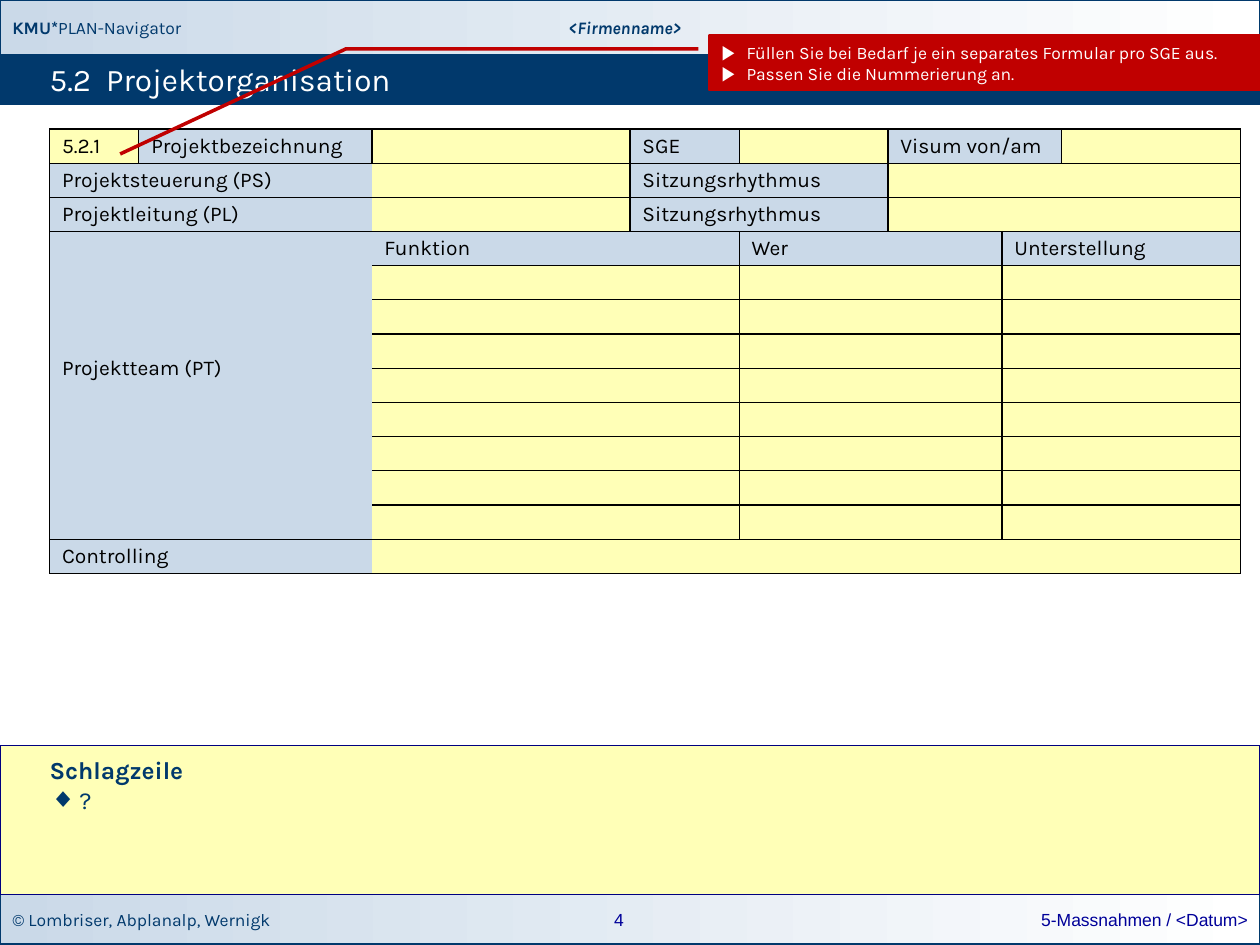
from dataclasses import dataclass

from lxml.etree import SubElement
from pptx import Presentation
from pptx.dml.color import RGBColor
from pptx.enum.shapes import MSO_SHAPE
from pptx.enum.text import MSO_ANCHOR, PP_ALIGN
from pptx.oxml.ns import qn
from pptx.util import Cm, Pt


@dataclass(frozen=True)
class Theme:
    navy: str = "01396C"
    pale: str = "CAD9E8"
    yellow: str = "FFFFB7"
    red: str = "C00000"
    white: str = "FFFFFF"
    black: str = "000000"
    footer: str = "000099"
    frame: str = "000080"
    font: str = "Karla"
    footer_font: str = "Arial"
    small: int = 10
    body: int = 12
    heading: int = 14
    title: int = 18


T = Theme()
LABEL, VALUE, FULL = "LTB", "RTB", "LRTB"
PLAIN_TABLE_STYLE = "{2D5ABB26-0587-4C30-8999-92F81FD0307C}"


def rgb(color):
    return RGBColor.from_string(color)


def write(p, text, color, size, font=T.font, **extra):
    r = p.add_run()
    r.text = text
    r.font.color.rgb = rgb(color)
    for name, value in {"name": font, "size": Pt(size), **extra}.items():
        setattr(r.font, name, value)


def frame(tf, left=0.25, top=0.13, right=0.25, bottom=0.13, anchor=MSO_ANCHOR.MIDDLE):
    values = {"margin_left": Cm(left), "margin_top": Cm(top), "margin_right": Cm(right),
              "margin_bottom": Cm(bottom), "vertical_anchor": anchor, "word_wrap": True}
    for name, value in values.items():
        setattr(tf, name, value)
    return tf


def bullet(p, char, color, percent, indent):
    pPr = p._p.get_or_add_pPr()
    pPr.set("marL", str(Cm(indent)))
    pPr.set("indent", str(-Cm(indent)))
    SubElement(SubElement(pPr, qn("a:buClr")), qn("a:srgbClr"), val=color)
    SubElement(pPr, qn("a:buSzPct"), val=str(percent * 1000))
    SubElement(pPr, qn("a:buFont"), typeface=T.footer_font)
    SubElement(pPr, qn("a:buChar"), char=char)


def add_box(s, box, fill, line, width=0.75, shape=MSO_SHAPE.RECTANGLE):
    """A pair of fill colours makes a gradient from left to right."""
    sp = s.shapes.add_shape(shape, *map(Cm, box))
    sp.shadow.inherit = False
    if isinstance(fill, tuple):
        sp.fill.gradient()
        sp.fill.gradient_angle = 0
        for stop, color in zip(sp.fill.gradient_stops, fill):
            stop.color.rgb = rgb(color)
    else:
        sp.fill.solid()
        sp.fill.fore_color.rgb = rgb(fill)
    sp.line.color.rgb = rgb(line)
    sp.line.width = Pt(width)
    sp.text_frame.paragraphs[0].alignment = PP_ALIGN.LEFT
    return sp


def add_label(s, box, text, color, size, align=PP_ALIGN.LEFT, inset=0.25, **font):
    tf = frame(s.shapes.add_textbox(*map(Cm, box)).text_frame, left=inset, right=inset)
    tf.paragraphs[0].alignment = align
    write(tf.paragraphs[0], text, color, size, **font)


def add_header(s, left, top, width, band, title_band):
    sp = add_box(s, (left, top, width, band), (T.pale, T.white), T.navy)
    p = frame(sp.text_frame).paragraphs[0]
    write(p, "KMU*", T.navy, T.small, bold=True)
    write(p, "PLAN-Navigator", T.navy, T.small)
    add_label(s, (left + 8.1, top, 9, band), "<Firmenname>", T.navy, T.small,
              PP_ALIGN.CENTER, bold=True, italic=True)
    add_box(s, (left, top + band, width, title_band), T.navy, T.navy)
    add_label(s, (left + 1, top + band, 23.6, title_band), "5.2  Projektorganisation",
              T.white, T.title, inset=0)


def add_footer(s, left, top, width, height):
    sp = add_box(s, (left, top, width, height), (T.pale, T.white), T.navy)
    write(frame(sp.text_frame).paragraphs[0], "© Lombriser, Abplanalp, Wernigk",
          T.navy, T.small)
    add_label(s, (left + 11.88, top, 1.2, height), "4", T.footer, T.small,
              PP_ALIGN.CENTER, font=T.footer_font)
    add_label(s, (left + width - 8, top, 8, height), "5-Massnahmen / <Datum>",
              T.footer, T.small, PP_ALIGN.RIGHT, font=T.footer_font)


def add_border(cell, side):
    ln = SubElement(cell._tc.get_or_add_tcPr(), qn(f"a:ln{side}"), w=str(Pt(0.75)))
    SubElement(SubElement(ln, qn("a:solidFill")), qn("a:srgbClr"), val=T.black)


def fill_cell(table, row, col, rows, cols, text, fill, sides):
    """The merge origin carries every border, covered cells only the outer ones."""
    last_row, last_col = row + rows - 1, col + cols - 1
    origin = table.cell(row, col)
    if rows * cols > 1:
        origin.merge(table.cell(last_row, last_col))
    for r in range(row, last_row + 1):
        for c in range(col, last_col + 1):
            cell = table.cell(r, c)
            outer = {"L": c == col, "R": c == last_col, "T": r == row, "B": r == last_row}
            for side in sides:
                if outer[side] or not cell.is_spanned:
                    add_border(cell, side)
            cell.fill.solid()
            cell.fill.fore_color.rgb = rgb(fill)
            for name, value in {"margin_left": Cm(0.25), "margin_right": Cm(0.05),
                                "margin_top": Cm(0.09), "margin_bottom": Cm(0.09),
                                "vertical_anchor": MSO_ANCHOR.MIDDLE}.items():
                setattr(cell, name, value)
            if not text or cell.is_spanned:
                end = SubElement(cell.text_frame.paragraphs[0]._p, qn("a:endParaRPr"),
                                 sz=str(T.body * 100))
                SubElement(end, qn("a:latin"), typeface=T.font)
    if text:
        write(origin.text_frame.paragraphs[0], text, T.black, T.body)
    return origin


def add_project_form(s, left, top, row_height, widths, team_rows):
    n_rows = team_rows + 5
    table = s.shapes.add_table(n_rows, len(widths), Cm(left), Cm(top), Cm(sum(widths)),
                               Cm(row_height * n_rows)).table
    table.first_row = table.horz_banding = False
    table._tbl.tblPr.find(qn("a:tableStyleId")).text = PLAIN_TABLE_STYLE
    for column, width in zip(table.columns, widths):
        column.width = Cm(width)
    for row in table.rows:
        row.height = Cm(row_height)

    def label(row, col, cols, text, sides=LABEL, rows=1):
        return fill_cell(table, row, col, rows, cols, text, T.pale, sides)

    def value(row, col, cols, text="", sides=VALUE):
        fill_cell(table, row, col, 1, cols, text, T.yellow, sides)

    value(0, 0, 1, "5.2.1", FULL)
    label(0, 1, 1, "Projektbezeichnung")
    value(0, 2, 1)
    label(0, 3, 1, "SGE")
    value(0, 4, 1)
    label(0, 5, 2, "Visum von/am")
    value(0, 7, 1)
    for row, text in enumerate(("Projektsteuerung (PS)", "Projektleitung (PL)"), 1):
        label(row, 0, 2, text)
        value(row, 2, 1)
        label(row, 3, 2, "Sitzungsrhythmus")
        value(row, 5, 3)
    team = label(3, 0, 2, "Projektteam (PT)", rows=team_rows + 1)
    team.margin_bottom = Cm(0.75)
    for col, text in ((2, "Funktion"), (4, "Wer"), (6, "Unterstellung")):
        sides = VALUE if col == 2 else FULL
        label(3, col, 2, text, sides)
        for row in range(4, 4 + team_rows):
            value(row, col, 2, sides=sides)
    label(n_rows - 1, 0, 2, "Controlling")
    value(n_rows - 1, 2, 6)


def add_hint(s, box, lines):
    """Callout whose bent leader ends at the form number."""
    sp = add_box(s, box, T.red, T.red, 2, MSO_SHAPE.LINE_CALLOUT_2)
    for i, value in enumerate((0.24, -0.02, 0.24, -0.66, 2.22, -1.07)):
        sp.adjustments[i] = value
    tf = frame(sp.text_frame, top=0.1, bottom=0.1)
    for i, line in enumerate(lines):
        p = tf.add_paragraph() if i else tf.paragraphs[0]
        p.alignment = PP_ALIGN.LEFT
        bullet(p, "▶", T.white, 115, 0.5)
        write(p, line, T.white, T.small)


def add_headline(s, box):
    sp = add_box(s, box, T.yellow, T.frame)
    tf = frame(sp.text_frame, 1, 0.2, 0.5, 0.2, MSO_ANCHOR.TOP)
    write(tf.paragraphs[0], "Schlagzeile", T.navy, T.heading, bold=True)
    p = tf.add_paragraph()
    p.alignment = PP_ALIGN.LEFT
    bullet(p, "◆", T.navy, 110, 0.6)
    write(p, "?", T.navy, T.heading)


def main():
    prs = Presentation()
    width = 25.4
    prs.slide_width, prs.slide_height = Cm(width), Cm(19.05)
    s = prs.slides.add_slide(prs.slide_layouts[6])
    add_header(s, 0, 0, width, 1.1, 1)
    add_footer(s, 0, 18.03, width, 1)
    add_project_form(s, 1, 2.6, 0.69, (1.8, 4.7, 5.2, 2.2, 3, 2.3, 1.2, 3.6), 8)
    add_hint(s, (14.3, 0.73, 11.1, 1.07),
             ("Füllen Sie bei Bedarf je ein separates Formular pro SGE aus.",
              "Passen Sie die Nummerierung an."))
    add_headline(s, (0, 15.03, width, 3))
    prs.save("out.pptx")


if __name__ == "__main__":
    main()
